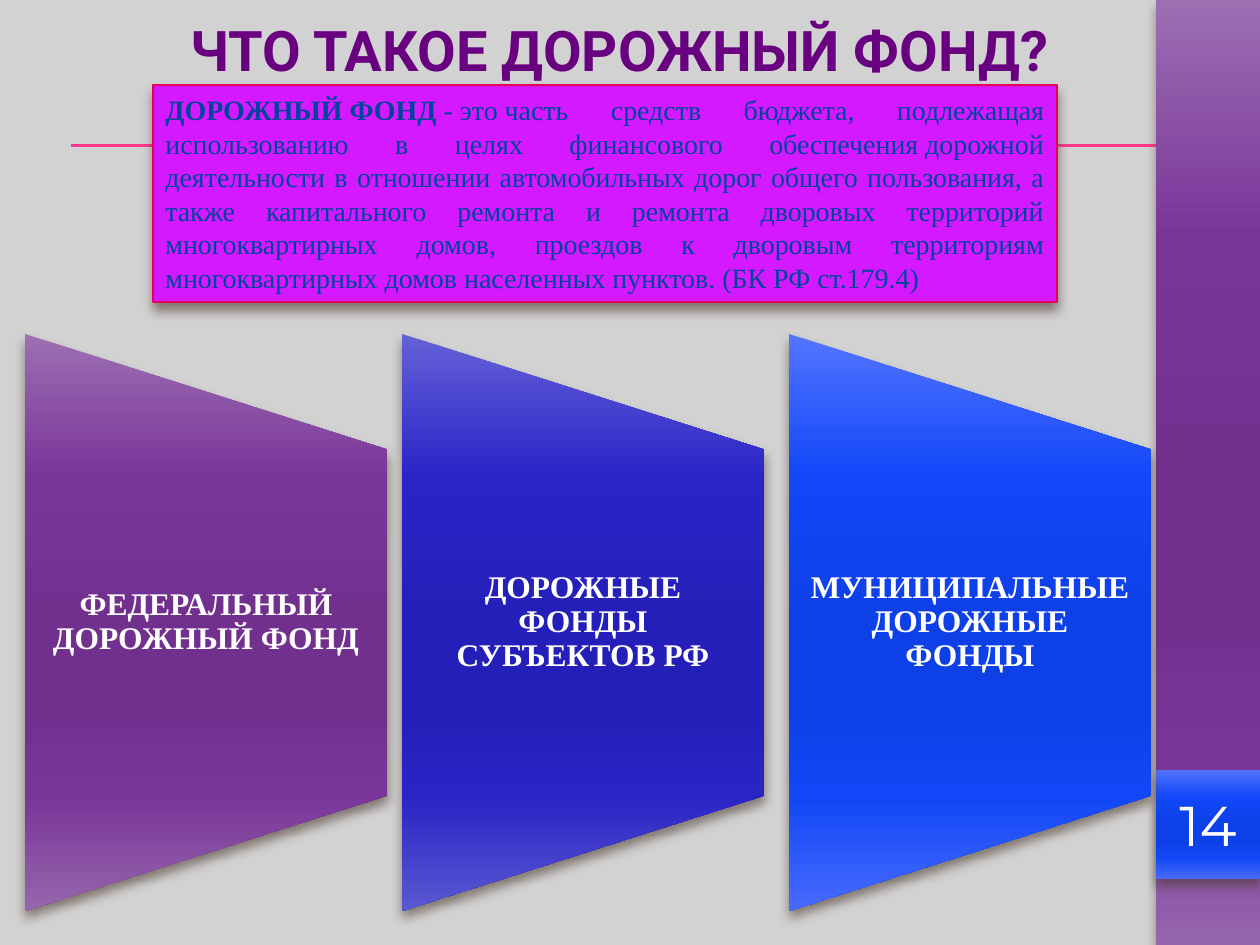
from lxml.etree import SubElement
from pptx import Presentation
from pptx.dml.color import RGBColor
from pptx.enum.shapes import MSO_CONNECTOR, MSO_SHAPE
from pptx.enum.text import MSO_ANCHOR, PP_ALIGN
from pptx.oxml.ns import qn
from pptx.util import Pt

TITLE = [" ", "ЧТО ТАКОЕ ДОРОЖНЫЙ ФОНД?"]
DEFINITION = [
    ("ДОРОЖНЫЙ\u00a0ФОНД", True),
    ("\u00a0-\u00a0это\u00a0часть средств бюджета, подлежащая использованию в целях "
     "финансового обеспечения\u00a0дорожной деятельности в отношении автомобильных "
     "дорог общего пользования, а также капитального ремонта и ремонта дворовых "
     "территорий многоквартирных домов, проездов к дворовым территориям "
     "многоквартирных домов населенных пунктов. (БК РФ ст.179.4)", False),
]
FUNDS = [
    ("ФЕДЕРАЛЬНЫЙ ДОРОЖНЫЙ ФОНД", "purple", 25),
    ("ДОРОЖНЫЕ ФОНДЫ СУБЪЕКТОВ РФ", "indigo", 402),
    ("МУНИЦИПАЛЬНЫЕ ДОРОЖНЫЕ ФОНДЫ", "blue", 789),
]
PAGE_NUMBER = "14"

COLORS = {
    "background": "D2D2D2", "rule": "FF388C", "title": "68007F",
    "panel": "D519FF", "panel_line": "E40059", "definition": "00449E",
    "white": "FFFFFF", "shadow": "4E3B30",
}
GRADIENTS = {
    "purple": ["9C6FB3", "7A3599", "71308E", "71308E", "7A3598", "9566AD"],
    "indigo": ["6460D8", "2A24C7", "251FB9", "251FB9", "2A24C5", "5B58D2"],
    "blue": ["5374FF", "1147F8", "0E40E7", "0E40E7", "1147F6", "476AFD"],
}
STOPS = [0, 25, 50, 65, 80, 100]
SCALE = 914400 / 126
FUND_TOP, FUND_WIDTH, FUND_HEIGHT = 334, 362, 577
LABEL_HEIGHT = 347


def px(value):
    return round(value * SCALE)


def color(name):
    return RGBColor.from_string(COLORS[name])


def add_run(paragraph, text, font, size, color_name, bold=False):
    run = paragraph.add_run()
    run.text = text
    run.font.name = font
    run.font.size = Pt(size)
    run.font.bold = bold
    run.font.color.rgb = color(color_name)


def set_gradient(shape, name):
    shape.fill.gradient()
    gradient = shape.element.spPr.find(qn("a:gradFill"))
    gradient.set("rotWithShape", "0")
    stop_list = gradient.find(qn("a:gsLst"))
    for stop in list(stop_list):
        stop_list.remove(stop)
    for position, value in zip(STOPS, GRADIENTS[name]):
        stop = SubElement(stop_list, qn("a:gs"), pos=str(position * 1000))
        SubElement(stop, qn("a:srgbClr"), val=value)
    gradient.find(qn("a:lin")).set("ang", "5400000")


def add_panel(slide, kind, left, top, width, height, gradient=None):
    shape = slide.shapes.add_shape(kind, px(left), px(top), px(width), px(height))
    if gradient:
        set_gradient(shape, gradient)
    shape.line.fill.background()
    shape.shadow.inherit = False
    effects = shape.element.spPr.find(qn("a:effectLst"))
    shadow = SubElement(effects, qn("a:outerShdw"), blurRad=str(Pt(6)),
                        dist=str(Pt(4)), dir="5400000", rotWithShape="0")
    shadow_color = SubElement(shadow, qn("a:srgbClr"), val=COLORS["shadow"])
    SubElement(shadow_color, qn("a:alpha"), val="60000")
    return shape


def add_rule(slide, y):
    rule = slide.shapes.add_connector(MSO_CONNECTOR.STRAIGHT, px(71), px(y), px(1260), px(y))
    rule.line.color.rgb = color("rule")
    rule.line.width = Pt(0.75)
    SubElement(rule.element.spPr, qn("a:effectLst"))


def fill_title(slide):
    title = slide.shapes.title
    title.left, title.top, title.width, title.height = px(64), px(-43), px(1097), px(185)
    title.text_frame.vertical_anchor = MSO_ANCHOR.MIDDLE
    paragraph = title.text_frame.paragraphs[0]
    paragraph.alignment = PP_ALIGN.CENTER
    for text in TITLE:
        add_run(paragraph, text, "Roboto", 32, "title", True)


def add_definition(slide):
    panel = add_panel(slide, MSO_SHAPE.RECTANGLE, 153, 85, 904, 217)
    panel.fill.solid()
    panel.fill.fore_color.rgb = color("panel")
    panel.line.color.rgb = color("panel_line")
    panel.line.width = Pt(0.79)
    panel.text_frame.word_wrap = True
    paragraph = panel.text_frame.paragraphs[0]
    paragraph.alignment = PP_ALIGN.JUSTIFY
    for text, bold in DEFINITION:
        add_run(paragraph, text, "Times New Roman", 16, "definition", bold)


def add_fund(slide, text, gradient, left):
    middle_x = left + FUND_WIDTH / 2
    middle_y = FUND_TOP + FUND_HEIGHT / 2
    shape = add_panel(slide, MSO_SHAPE.FLOWCHART_MANUAL_OPERATION,
                      middle_x - FUND_HEIGHT / 2, middle_y - FUND_WIDTH / 2,
                      FUND_HEIGHT, FUND_WIDTH, gradient)
    shape.rotation = 270
    label = slide.shapes.add_textbox(px(left), px(middle_y - LABEL_HEIGHT / 2),
                                     px(FUND_WIDTH), px(LABEL_HEIGHT))
    frame = label.text_frame
    frame.word_wrap = True
    frame.vertical_anchor = MSO_ANCHOR.MIDDLE
    frame.margin_left = frame.margin_right = px(15)
    frame.margin_top = frame.margin_bottom = 0
    paragraph = frame.paragraphs[0]
    paragraph.alignment = PP_ALIGN.CENTER
    paragraph.line_spacing = 0.9
    add_run(paragraph, text, "Times New Roman", 18, "white", True)


def main():
    presentation = Presentation()
    presentation.slide_width, presentation.slide_height = px(1260), px(945)
    slide = presentation.slides.add_slide(presentation.slide_layouts[5])
    slide.background.fill.solid()
    slide.background.fill.fore_color.rgb = color("background")
    fill_title(slide)
    for y in (145, 146):
        add_rule(slide, y)
    add_panel(slide, MSO_SHAPE.RECTANGLE, 1156, 0, 104, 945, "purple")
    number = add_panel(slide, MSO_SHAPE.RECTANGLE, 1156, 770, 104, 109, "blue")
    number.text_frame.vertical_anchor = MSO_ANCHOR.MIDDLE
    paragraph = number.text_frame.paragraphs[0]
    paragraph.alignment = PP_ALIGN.CENTER
    add_run(paragraph, PAGE_NUMBER, "Montserrat", 32, "white")
    add_definition(slide)
    for fund in FUNDS:
        add_fund(slide, *fund)
    presentation.save("out.pptx")


if __name__ == "__main__":
    main()
